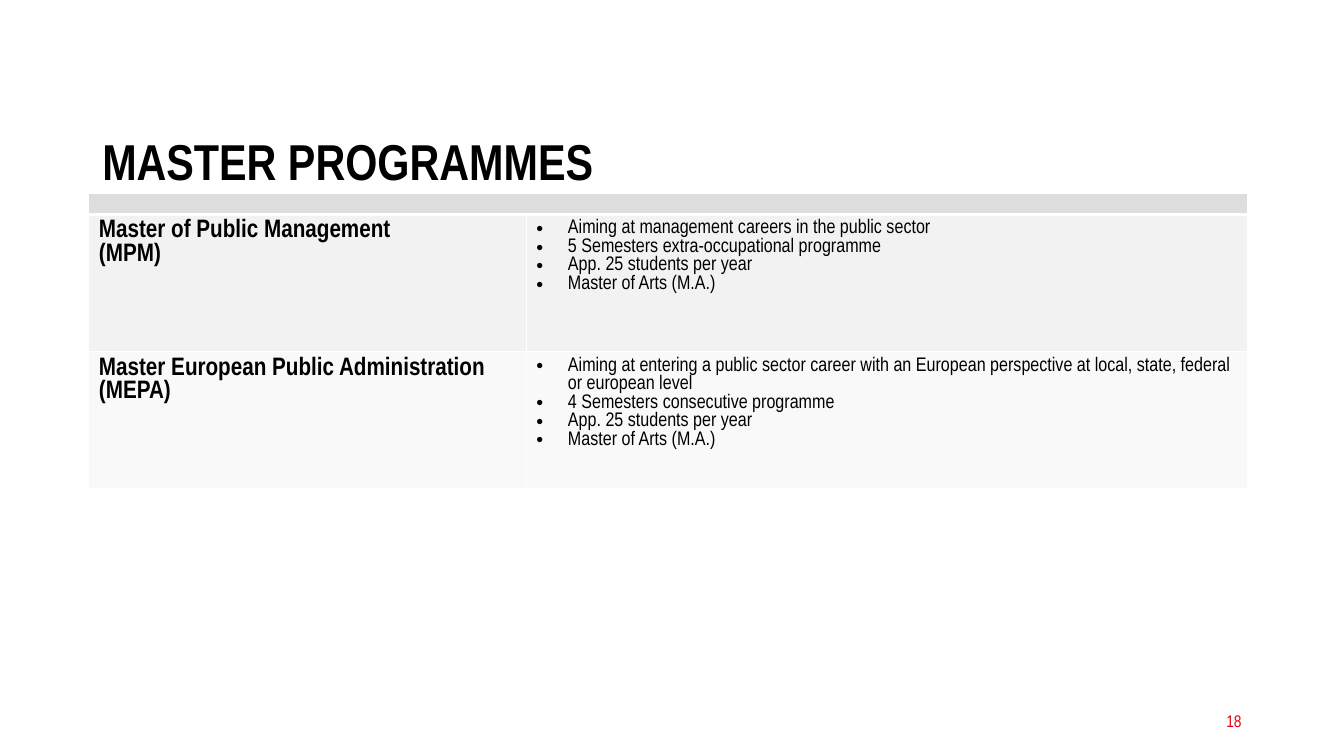
from dataclasses import dataclass

from lxml import etree
from pptx import Presentation
from pptx import util as u
from pptx.dml import color as clr
from pptx.enum import text
from pptx.oxml import ns


@dataclass(frozen=True)
class Theme:
    font: str = "Arial Narrow"
    ink: str = "000000"
    accent: str = "E2000B"
    rule: str = "FFFFFF"
    header: str = "DDDDDD"
    bands: tuple = ("F2F2F2", "F9F9F9")
    title: int = 36
    heading: int = 18
    body: int = 14
    number: int = 12
    spacer: int = 8


PROGRAMMES = [
    (["Master of Public Management", "(MPM)"],
     ["Aiming at management careers in the public sector",
      "5 Semesters extra-occupational programme",
      "App. 25 students per year",
      "Master of Arts (M.A.)"]),
    (["Master European Public Administration", "(MEPA)"],
     ["Aiming at entering a public sector career with an European perspective "
      "at local, state, federal or european level",
      "4 Semesters consecutive programme",
      "App. 25 students per year",
      "Master of Arts (M.A.)"]),
]


class Deck:
    def __init__(self, theme):
        self.theme = theme
        self.prs = Presentation()
        self.prs.slide_width, self.prs.slide_height = u.Pt(960), u.Pt(540)
        self.s = self.prs.slides.add_slide(self.prs.slide_layouts[6])

    def add_lines(self, tf, lines, size, color, bold=False, bullet=False, **layout):
        for i, line in enumerate(lines):
            p = tf.paragraphs[0] if i == 0 else tf.add_paragraph()
            for name, value in layout.items():
                setattr(p, name, value)
            if bullet:
                pPr = p._p.get_or_add_pPr()
                pPr.set("marL", str(u.Pt(22.5)))
                pPr.set("indent", str(u.Pt(-22.5)))
                etree.SubElement(pPr, ns.qn("a:buFont")).set("typeface", "Arial")
                etree.SubElement(pPr, ns.qn("a:buChar")).set("char", "•")
            r = p.add_run()
            r.text = line
            style = {"name": self.theme.font, "size": u.Pt(size), "bold": bold}
            for name, value in style.items():
                setattr(r.font, name, value)
            r.font.color.rgb = clr.RGBColor.from_string(color)

    def textbox(self, box, line, size, color, **style):
        tf = self.s.shapes.add_textbox(*map(u.Pt, box)).text_frame
        tf.word_wrap = True
        tf.vertical_anchor = text.MSO_ANCHOR.MIDDLE
        self.add_lines(tf, [line], size, color, **style)

    def cell(self, cell, fill, top=1, bottom=1):
        tcPr = cell._tc.get_or_add_tcPr()
        for side, width in {"L": 1, "R": 1, "T": top, "B": bottom}.items():
            ln = etree.SubElement(tcPr, ns.qn(f"a:ln{side}"), w=str(u.Pt(width)))
            solid = etree.SubElement(ln, ns.qn("a:solidFill"))
            etree.SubElement(solid, ns.qn("a:srgbClr"), val=self.theme.rule)
        cell.fill.solid()
        cell.fill.fore_color.rgb = clr.RGBColor.from_string(fill)

    def table(self, box, widths, heights, rows):
        t = self.theme
        shape = self.s.shapes.add_table(len(heights), len(widths), *map(u.Pt, box))
        tbl = shape.table
        tbl.first_row = tbl.horz_banding = False
        for column, width in zip(tbl.columns, widths):
            column.width = u.Pt(width)
        for row, height in zip(tbl.rows, heights):
            row.height = u.Pt(height)
        for cell in tbl.rows[0].cells:
            self.cell(cell, t.header, bottom=3)
            cell.margin_top = cell.margin_bottom = 0
            end = cell.text_frame.paragraphs[0]._p.get_or_add_endParaRPr()
            end.set("sz", str(t.spacer * 100))
        tbl.cell(0, 0).merge(tbl.cell(0, len(widths) - 1))
        for i, (heading, points) in enumerate(rows, 1):
            name, details = tbl.rows[i].cells
            for cell in (name, details):
                self.cell(cell, t.bands[i - 1], top=3 if i == 1 else 1)
            self.add_lines(name.text_frame, heading, t.heading, t.ink, bold=True)
            self.add_lines(details.text_frame, points, t.body, t.ink, bullet=True)


def main():
    theme = Theme()
    deck = Deck(theme)
    deck.textbox((678, 500.5, 216, 28.8), "18", theme.number, theme.accent,
                 alignment=text.PP_ALIGN.RIGHT)
    deck.table((63.5, 138.3, 828, 211), (312.5, 515.5), (15, 98, 98), PROGRAMMES)
    deck.textbox((66, 78.5, 828, 77), "MASTER PROGRAMMES", theme.title, theme.ink,
                 bold=True, line_spacing=0.9)
    deck.prs.save("out.pptx")


if __name__ == "__main__":
    main()
